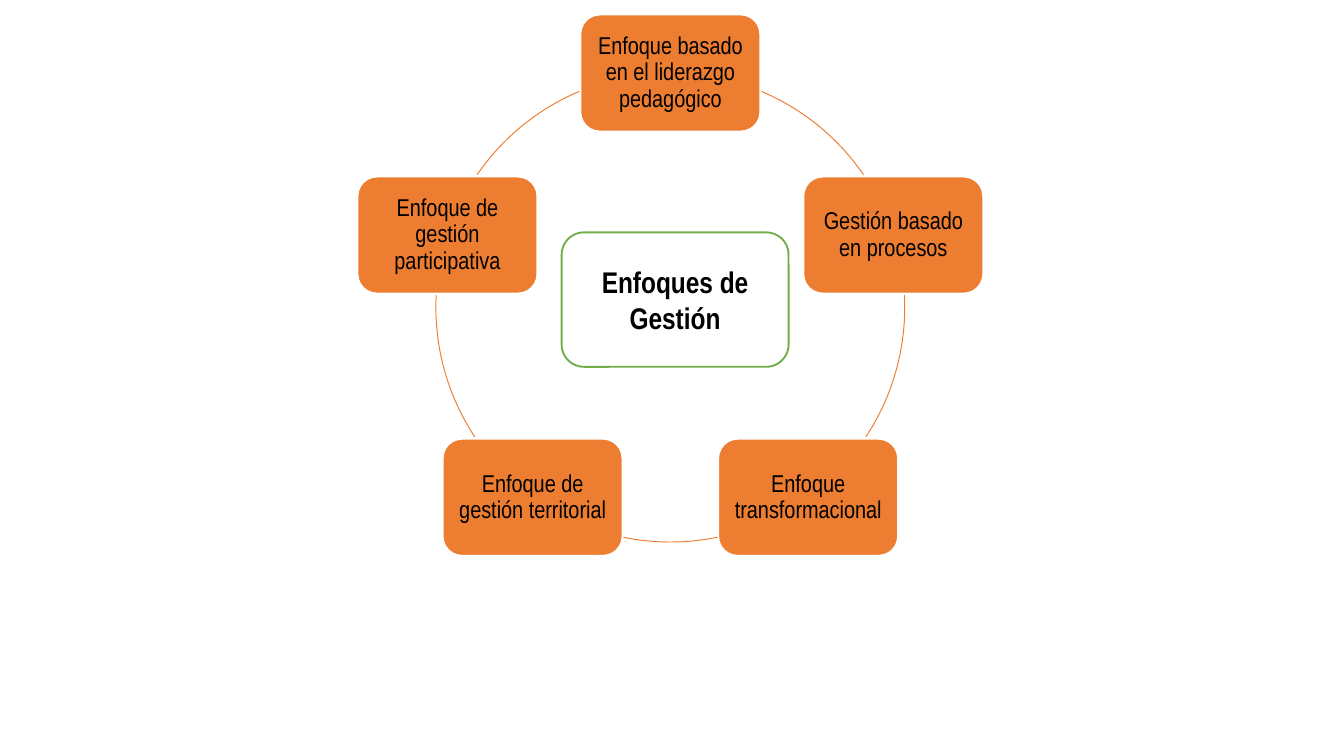
from math import cos, radians, sin
from typing import NamedTuple

from pptx import Presentation
from pptx.dml.color import RGBColor
from pptx.enum.shapes import MSO_SHAPE
from pptx.enum.text import MSO_ANCHOR, PP_ALIGN
from pptx.util import Cm, Pt

ORANGE = RGBColor(0xED, 0x7D, 0x31)
GREEN = RGBColor(0x70, 0xAD, 0x47)
WHITE = RGBColor(0xFF, 0xFF, 0xFF)
BLACK = RGBColor(0x00, 0x00, 0x00)

# Ring geometry in centimetres
CENTER_X, CENTER_Y, RADIUS = 12.67, 5.81, 4.43


class Box(NamedTuple):
    text: str
    x: float  # centre
    y: float
    width: float
    height: float
    fill: RGBColor
    line: RGBColor
    spacing: float
    inset: float
    font: dict


class Arc(NamedTuple):
    start: float  # degrees, clockwise from the right
    end: float


def add_box(s, box: Box) -> None:
    sp = s.shapes.add_shape(
        MSO_SHAPE.ROUNDED_RECTANGLE,
        Cm(box.x - box.width / 2), Cm(box.y - box.height / 2),
        Cm(box.width), Cm(box.height))
    sp.shadow.inherit = False
    sp.fill.solid()
    sp.fill.fore_color.rgb = box.fill
    sp.line.color.rgb = box.line
    sp.line.width = Pt(1)

    tf = sp.text_frame
    frame = {"word_wrap": True, "vertical_anchor": MSO_ANCHOR.MIDDLE,
             "margin_left": Cm(box.inset), "margin_right": Cm(box.inset),
             "margin_top": Cm(0.13), "margin_bottom": Cm(0.13)}
    for name, value in frame.items():
        setattr(tf, name, value)

    p = tf.paragraphs[0]
    p.alignment = PP_ALIGN.CENTER
    p.line_spacing = box.spacing
    r = p.add_run()
    r.text = box.text
    r.font.color.rgb = BLACK
    for name, value in box.font.items():
        setattr(r.font, name, value)


def add_arc(s, arc: Arc) -> None:
    sp = s.shapes.add_shape(
        MSO_SHAPE.ARC, Cm(CENTER_X - RADIUS), Cm(CENTER_Y - RADIUS),
        Cm(2 * RADIUS), Cm(2 * RADIUS))
    sp.shadow.inherit = False
    sp.fill.background()
    sp.line.color.rgb = ORANGE
    sp.line.width = Pt(0.5)
    # Angles are stored in 60000ths of a degree, adjustments in 100000ths
    for i, angle in enumerate(arc):
        sp.adjustments[i] = angle % 360 * 0.6


# Clockwise from the top
APPROACHES = [
    "Enfoque basado en el liderazgo pedagógico",
    "Gestión basado en procesos",
    "Enfoque transformacional",
    "Enfoque de gestión territorial",
    "Enfoque de gestión participativa",
]
ARCS = [Arc(-67.1, -34.5), Arc(-3, 33.5), Arc(78.4, 101.6),
        Arc(146.5, 183), Arc(214.5, 247.1)]
NODE_FONT = {"name": "Arial Narrow", "size": Pt(13), "bold": False}
CENTER_FONT = {"name": "Arial Narrow", "size": Pt(16), "bold": True}


def main() -> None:
    prs = Presentation()
    prs.slide_width, prs.slide_height = Cm(25.4), Cm(14.28)
    s = prs.slides.add_slide(prs.slide_layouts[6])

    # Ring of approaches
    step = 360 / len(APPROACHES)
    for i, (text, arc) in enumerate(zip(APPROACHES, ARCS)):
        angle = radians(i * step - 90)
        add_box(s, Box(text, CENTER_X + RADIUS * cos(angle),
                       CENTER_Y + RADIUS * sin(angle), 3.4, 2.21,
                       ORANGE, WHITE, 0.9, 0.13, NODE_FONT))
        add_arc(s, arc)

    # Central topic
    add_box(s, Box("Enfoques de Gestión", 12.76, 5.66, 4.29, 2.54,
                   WHITE, GREEN, 1.0, 0.25, CENTER_FONT))

    prs.save("out.pptx")


if __name__ == "__main__":
    main()
